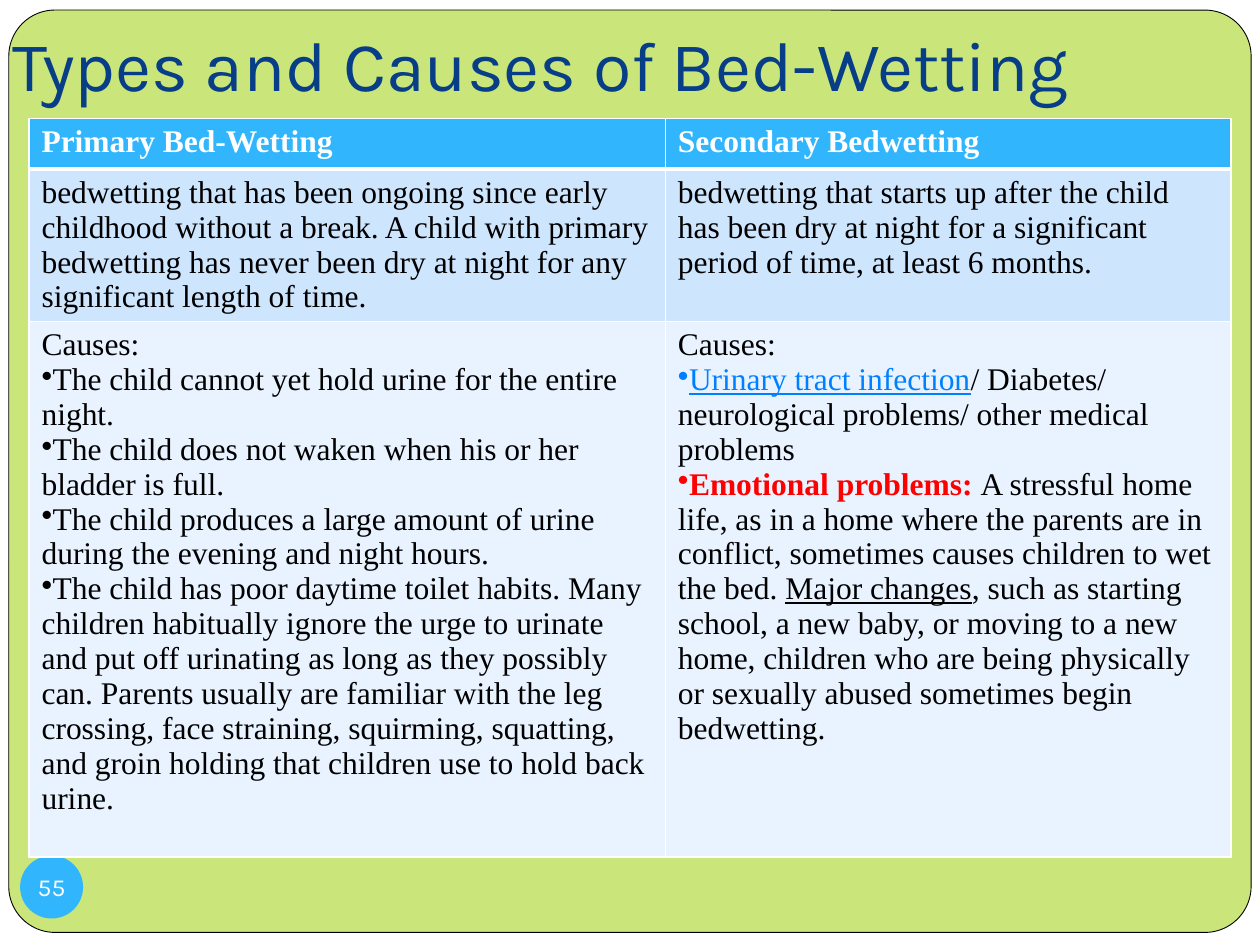
from lxml.etree import SubElement
from pptx import Presentation
from pptx.dml.color import RGBColor
from pptx.enum.shapes import MSO_SHAPE
from pptx.enum.text import MSO_ANCHOR, PP_ALIGN
from pptx.oxml.ns import qn
from pptx.util import Inches, Pt

WHITE = RGBColor(0xFF, 0xFF, 0xFF)
BLACK = RGBColor(0x00, 0x00, 0x00)
RED = RGBColor(0xFF, 0x00, 0x00)
LIME = RGBColor(0xCA, 0xE6, 0x7B)
NAVY = RGBColor(0x07, 0x3E, 0x87)
SKY = RGBColor(0x31, 0xB6, 0xFD)
LINK_BLUE = RGBColor(0x00, 0x80, 0xFF)
ROW_BLUE = RGBColor(0xCE, 0xE5, 0xFE)
ROW_PALE = RGBColor(0xE8, 0xF3, 0xFF)

HEADER = {"color": WHITE, "bold": True}
LINK = {"color": LINK_BLUE, "underline": True}
ALERT = {"color": RED, "bold": True}
UNDERLINED = {"underline": True}

PRIMARY_CAUSES = [
    "The child cannot yet hold urine for the entire night.",
    "The child does not waken when his or her bladder is full.",
    "The child produces a large amount of urine during the evening and night hours.",
    "The child has poor daytime toilet habits. Many children habitually ignore the urge "
    "to urinate and put off urinating as long as they possibly can. Parents usually are "
    "familiar with the leg crossing, face straining, squirming, squatting, and groin "
    "holding that children use to hold back urine.",
]
SECONDARY_CAUSES = [
    [("Urinary tract infection", LINK),
     ("/ Diabetes/ neurological problems/ other medical problems", {})],
    [("Emotional problems: ", ALERT),
     ("A stressful home life, as in a home where the parents are in conflict, "
      "sometimes causes children to wet the bed. ", {}),
     ("Major changes", UNDERLINED),
     (", such as starting school, a new baby, or moving to a new home, children who "
      "are being physically or sexually abused sometimes begin bedwetting.", {})],
]
TABLE_ROWS = [
    (0.4, SKY, [
        [[("Primary Bed-Wetting", HEADER)]],
        [[("Secondary Bedwetting", HEADER)]],
    ]),
    (1.21, ROW_BLUE, [
        [[("bedwetting that has been ongoing since early childhood without a break. "
           "A child with primary bedwetting has never been dry at night for any "
           "significant length of time.", {})]],
        [[("bedwetting that starts up after the child has been dry at night for a "
           "significant period of time, at least 6 months.", {})]],
    ]),
    (4.25, ROW_PALE, [
        [[("Causes:", {})]] + [[(cause, {})] for cause in PRIMARY_CAUSES],
        [[("Causes:", {})]] + SECONDARY_CAUSES,
    ]),
]


class SlideBuilder:
    heading_font = "Karla"
    body_font = "Times New Roman"
    body_size = 18

    def __init__(self, presentation):
        self.slide = presentation.slides.add_slide(presentation.slide_layouts[5])

    def background(self, color):
        fill = self.slide.background.fill
        fill.solid()
        fill.fore_color.rgb = color

    def shape(self, kind, left, top, width, height, color, line_color=None):
        shape = self.slide.shapes.add_shape(
            kind, Inches(left), Inches(top), Inches(width), Inches(height))
        shape.shadow.inherit = False
        shape.fill.solid()
        shape.fill.fore_color.rgb = color
        if line_color is None:
            shape.line.fill.background()
        else:
            shape.line.color.rgb = line_color
            shape.line.width = Pt(0.5)
        return shape

    def style_run(self, run, font, size, color=BLACK, bold=False, underline=False):
        run.font.name = font
        run.font.size = Pt(size)
        run.font.color.rgb = color
        run.font.bold = bold
        run.font.underline = underline

    def title(self, text, left, top, width, height):
        title = self.slide.shapes.title
        title.element.getparent().append(title.element)
        title.left, title.top = Inches(left), Inches(top)
        title.width, title.height = Inches(width), Inches(height)
        frame = title.text_frame
        frame.text = text
        frame.word_wrap = True
        frame.vertical_anchor = MSO_ANCHOR.BOTTOM
        frame.margin_left = frame.margin_right = frame.margin_bottom = Inches(0.1)
        frame.margin_top = Inches(0.05)
        paragraph = frame.paragraphs[0]
        paragraph.alignment = PP_ALIGN.LEFT
        self.style_run(paragraph.runs[0], self.heading_font, 40, NAVY)

    def number_badge(self, text, left, top, diameter):
        badge = self.shape(MSO_SHAPE.OVAL, left, top, diameter, diameter, SKY)
        frame = badge.text_frame
        frame.text = text
        frame.word_wrap = False
        frame.vertical_anchor = MSO_ANCHOR.MIDDLE
        frame.margin_left = frame.margin_right = 0
        frame.margin_top = frame.margin_bottom = 0
        paragraph = frame.paragraphs[0]
        paragraph.alignment = PP_ALIGN.CENTER
        self.style_run(paragraph.runs[0], self.heading_font, 14, WHITE)

    def bullet(self, paragraph):
        properties = paragraph._p.get_or_add_pPr()
        properties.set("marL", "0")
        properties.set("indent", "0")
        SubElement(properties, qn("a:buChar")).set("char", "•")

    def fill_cell(self, cell, color, paragraphs):
        frame = cell.text_frame
        for index, runs in enumerate(paragraphs):
            paragraph = frame.add_paragraph() if index else frame.paragraphs[0]
            if index:
                self.bullet(paragraph)
            for text, style in runs:
                run = paragraph.add_run()
                run.text = text
                self.style_run(run, self.body_font, self.body_size, **style)
        cell.fill.solid()
        cell.fill.fore_color.rgb = color

    def cell_borders(self, cell, widths):
        properties = cell._tc.get_or_add_tcPr()
        for index, (side, width) in enumerate(widths.items()):
            line = SubElement(properties, qn(f"a:ln{side}"))
            line.set("w", str(Pt(width)))
            fill = SubElement(line, qn("a:solidFill"))
            SubElement(fill, qn("a:srgbClr")).set("val", str(WHITE))
            properties.insert(index, line)

    def table(self, left, top, column_widths, rows):
        height = sum(row_height for row_height, _, _ in rows)
        table = self.slide.shapes.add_table(
            len(rows), len(column_widths), Inches(left), Inches(top),
            Inches(sum(column_widths)), Inches(height)).table
        for column, width in zip(table.columns, column_widths):
            column.width = Inches(width)
        for row_index, (row_height, color, cells) in enumerate(rows):
            table.rows[row_index].height = Inches(row_height)
            for column_index, paragraphs in enumerate(cells):
                cell = table.cell(row_index, column_index)
                self.fill_cell(cell, color, paragraphs)
                self.cell_borders(cell, {
                    "L": 1, "R": 1,
                    "T": 3 if row_index == 1 else 1,
                    "B": 3 if row_index == 0 else 1})


def main():
    presentation = Presentation()
    presentation.slide_width = Inches(10)
    presentation.slide_height = Inches(7.5)
    builder = SlideBuilder(presentation)
    builder.background(LIME)
    builder.shape(MSO_SHAPE.RECTANGLE, 0, 0, 10, 7.5, WHITE)
    panel = builder.shape(
        MSO_SHAPE.ROUNDED_RECTANGLE, 0.07, 0.08, 9.86, 7.32, LIME, BLACK)
    panel.adjustments[0] = 0.05
    builder.title("Types and Causes of Bed-Wetting", 0, 0, 9.84, 0.94)
    builder.number_badge("55", 0.16, 6.79, 0.5)
    builder.table(0.23, 0.94, [5.05, 4.49], TABLE_ROWS)
    presentation.save("out.pptx")


if __name__ == "__main__":
    main()
